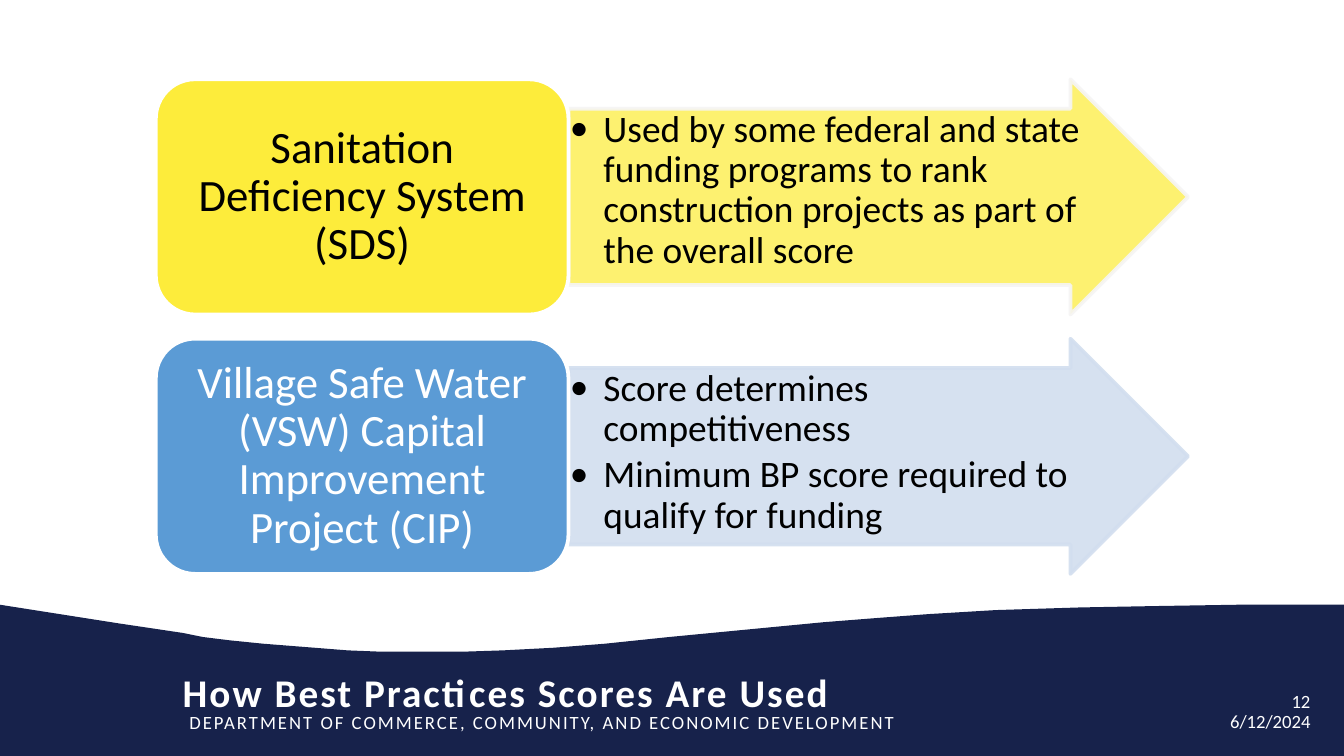
"""Build the slide on how best practices scores are used."""
from dataclasses import dataclass

from lxml import etree
from pptx import Presentation
from pptx.dml.color import RGBColor
from pptx.enum.shapes import MSO_SHAPE
from pptx.enum.text import MSO_ANCHOR, PP_ALIGN
from pptx.oxml.ns import qn
from pptx.util import Inches, Pt

ARROW, BOX = MSO_SHAPE.RIGHT_ARROW, MSO_SHAPE.ROUNDED_RECTANGLE
LEFT, CENTER, RIGHT = PP_ALIGN.LEFT, PP_ALIGN.CENTER, PP_ALIGN.RIGHT
TOP, MIDDLE = MSO_ANCHOR.TOP, MSO_ANCHOR.MIDDLE


@dataclass
class Theme:
    font: str = "Calibri"
    navy: str = "17224B"
    yellow: str = "FDEC3B"
    blue: str = "5B9BD5"
    pale_blue: str = "D2DEEF"
    pale_gray: str = "F6F5F5"
    white: str = "FFFFFF"
    black: str = "000000"
    title: int = 21
    label: int = 24
    body: int = 20
    small: int = 10


theme = Theme()
prs = Presentation()
prs.slide_width, prs.slide_height = Inches(10), Inches(5.625)
COL, ROW = prs.slide_width / 100, prs.slide_height / 100
s = prs.slides.add_slide(prs.slide_layouts[6])


def add_block(kind, left, top, width, height, fill, line, fill_alpha=100, line_alpha=100):
    sp = s.shapes.add_shape(kind, *(int(v) for v in (left * COL, top * ROW, width * COL, height * ROW)))
    sp.shadow.inherit = False
    sp.fill.solid()
    sp.fill.fore_color.rgb = RGBColor.from_string(fill)
    sp.line.color.rgb = RGBColor.from_string(line)
    sp.line.width = Pt(2)
    colors = sp._element.spPr.iter(qn("a:srgbClr"))
    for color, alpha in zip(list(colors), (fill_alpha, line_alpha)):
        etree.SubElement(color, qn("a:alpha"), val=str(alpha * 1000))
    return sp


def add_text(left, top, width, height, lines, size, color, align=LEFT, anchor=TOP,
             margins=(0, 0), spacing=1.0, bold=False, tracking=0, bullet=False):
    sp = s.shapes.add_textbox(*(int(v) for v in (left * COL, top * ROW, width * COL, height * ROW)))
    tf = sp.text_frame
    frame = {"word_wrap": True, "vertical_anchor": anchor,
             "margin_left": Inches(margins[0]), "margin_right": Inches(margins[0]),
             "margin_top": Inches(margins[1]), "margin_bottom": Inches(margins[1])}
    for name, value in frame.items():
        setattr(tf, name, value)
    for i, line in enumerate(lines):
        p = tf.add_paragraph() if i else tf.paragraphs[0]
        p.alignment, p.line_spacing = align, spacing
        if bullet:
            p.space_after = Pt(3)
            pPr = p._p.get_or_add_pPr()
            pPr.set("marL", str(Inches(0.25)))
            pPr.set("indent", str(-Inches(0.25)))
            etree.SubElement(pPr, qn("a:buFont"), typeface=theme.font)
            etree.SubElement(pPr, qn("a:buChar"), char="•")
        r = p.add_run()
        r.text = line
        for name, value in {"name": theme.font, "size": Pt(size), "bold": bold}.items():
            setattr(r.font, name, value)
        r.font.color.rgb = RGBColor.from_string(color)
        if tracking:
            r._r.get_or_add_rPr().set("spc", str(tracking))


wave = [(100, 80), (92.1, 80), (86, 80.18), (80.4, 80.36), (74.1, 80.71), (69.1, 81.24),
        (65.1, 81.78), (61.3, 82.31), (49.8, 84.27), (45, 85.16), (41.2, 85.69),
        (37.4, 86.04), (34.4, 86.22), (28.4, 86.22), (25.9, 86.04), (23.4, 85.69),
        (19.6, 85.16), (17.1, 84.71), (15.1, 84.27), (13.6, 83.73), (11.6, 83.2),
        (8.9, 82.49), (0, 80), (0, 100), (100, 100)]
points = [(int(x * COL), int(y * ROW)) for x, y in wave]
builder = s.shapes.build_freeform(*points[0])
builder.add_line_segments(points[1:], close=True)
footer = builder.convert_to_shape()
footer.shadow.inherit = False
footer.fill.solid()
footer.fill.fore_color.rgb = RGBColor.from_string(theme.navy)
footer.line.fill.background()

add_text(13.1, 93.16, 63.1, 4.8, ["DEPARTMENT OF COMMERCE, COMMUNITY, AND ECONOMIC DEVELOPMENT"],
         theme.small, theme.white, margins=(0.1, 0.05), tracking=110)
add_text(13.6, 88.42, 62.6, 6.22, ["How Best Practices Scores Are Used"],
         theme.title, theme.white, bold=True, tracking=110)
add_text(74.5, 91.2, 23, 3.02, ["12"], theme.small, theme.white, RIGHT)
add_text(89.1, 93.87, 8.4, 3.02, ["6/12/2024"], theme.small, theme.white, RIGHT)

programs = [
    ("Sanitation Deficiency System (SDS)", theme.yellow, theme.black,
     (theme.yellow, theme.pale_gray, 73, 90),
     ["Used by some federal and state funding programs to rank construction projects "
      "as part of the overall score"]),
    ("Village Safe Water (VSW) Capital Improvement Project (CIP)", theme.blue, theme.white,
     (theme.pale_blue, theme.pale_blue, 90, 90),
     ["Score determines competitiveness", "Minimum BP score required to qualify for funding"]),
]
BOX_LEFT, BOX_WIDTH, ARROW_WIDTH, HEIGHT = 11.6, 30.7, 46.1, 31.11
arrow_left = BOX_LEFT + BOX_WIDTH
for i, (label, fill, ink, arrow_style, uses) in enumerate(programs):
    top = 10.49 + i * 34.31
    arrow = add_block(ARROW, arrow_left, top, ARROW_WIDTH, HEIGHT, *arrow_style)
    arrow.adjustments[0], arrow.adjustments[1] = 0.75, 0.5
    add_text(arrow_left, top + HEIGHT / 8, 39.5, HEIGHT * 0.75, uses, theme.body, theme.black,
             margins=(0.01, 0.01), spacing=0.9, bullet=True)
    add_block(BOX, BOX_LEFT, top, BOX_WIDTH, HEIGHT, fill, theme.white)
    add_text(BOX_LEFT + 0.85, top + 1.5, BOX_WIDTH - 1.7, HEIGHT - 3, [label], theme.label, ink,
             CENTER, MIDDLE, margins=(0.1, 0.05), spacing=0.9)

prs.save("out.pptx")
